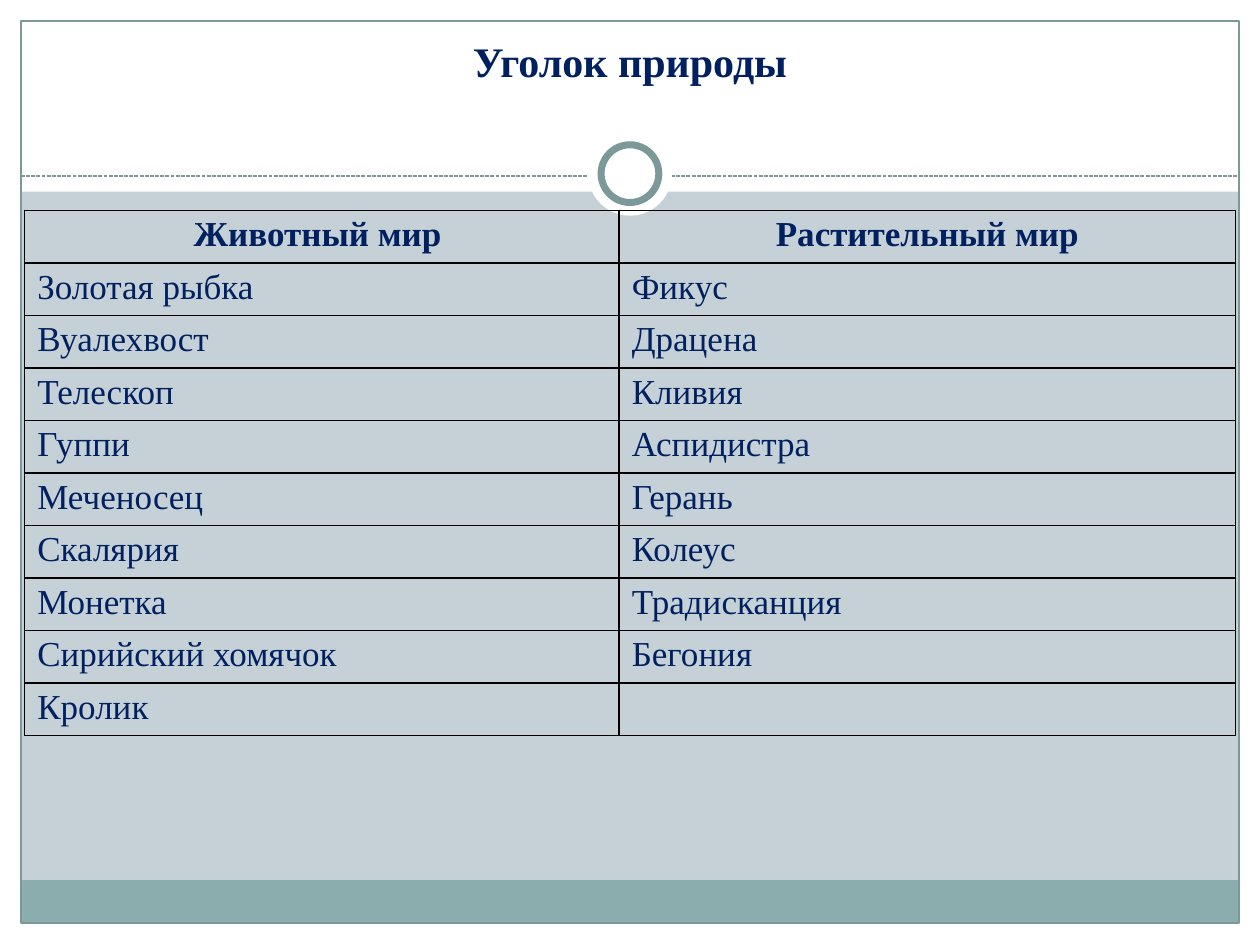
from lxml import etree
from pptx import Presentation
from pptx.dml.color import RGBColor
from pptx.enum.dml import MSO_LINE
from pptx.enum.shapes import MSO_CONNECTOR, MSO_SHAPE
from pptx.enum.text import MSO_ANCHOR, PP_ALIGN
from pptx.oxml.ns import qn
from pptx.util import Pt

RECTANGLE, OVAL = MSO_SHAPE.RECTANGLE, MSO_SHAPE.OVAL
STRAIGHT = MSO_CONNECTOR.STRAIGHT
DASH = MSO_LINE.SQUARE_DOT
TOP, CENTER, LEFT = MSO_ANCHOR.TOP, PP_ALIGN.CENTER, PP_ALIGN.LEFT
WHITE, TEAL, BAND, NAVY = "FFFFFF", "7C999A", "8CADAE", "002060"


def color(hex_string):
    return RGBColor.from_string(hex_string)


def add_text(paragraph, text, size, bold, alignment):
    paragraph.alignment = alignment
    run = paragraph.add_run()
    run.text = text
    run.font.name = "Times New Roman"
    run.font.size = Pt(size)
    run.font.bold = bold
    run.font.color.rgb = color(NAVY)


presentation = Presentation()
presentation.slide_width, presentation.slide_height = Pt(720), Pt(540)
slide = presentation.slides.add_slide(presentation.slide_layouts[6])
slide.background.fill.solid()
slide.background.fill.fore_color.rgb = color("C5D1D7")

# White margins, bottom band, frame, then the dashed rule and ring on top
decorations = [
    (RECTANGLE, 0, 528, 720, 12, WHITE, 0),
    (RECTANGLE, 0, 0, 720, 109.5, WHITE, 0),
    (RECTANGLE, 0, 0, 12, 540, WHITE, 0),
    (RECTANGLE, 708, 0, 12, 540, WHITE, 0),
    (RECTANGLE, 11.75, 503, 696, 24.5, BAND, 0),
    (RECTANGLE, 12, 12, 696, 515.5, None, 0.75),
    (OVAL, 336, 75.25, 48, 48, WHITE, 0),
    (OVAL, 343.5, 82.75, 33, 33, WHITE, 4),
]
for kind, left, top, width, height, fill, line_width in decorations:
    if kind == OVAL and not line_width:
        rule = slide.shapes.add_connector(STRAIGHT, Pt(12), Pt(100.6), Pt(708), Pt(100.6))
        rule.line.color.rgb = color(TEAL)
        rule.line.width = Pt(0.75)
        rule.line.dash_style = DASH
        etree.SubElement(rule._element.spPr, qn("a:effectLst"))
    shape = slide.shapes.add_shape(kind, Pt(left), Pt(top), Pt(width), Pt(height))
    shape.shadow.inherit = False
    if fill:
        shape.fill.solid()
        shape.fill.fore_color.rgb = color(fill)
    else:
        shape.fill.background()
    if line_width:
        shape.line.color.rgb = color(TEAL)
        shape.line.width = Pt(line_width)
    else:
        shape.line.fill.background()

# Title
title = slide.shapes.add_textbox(Pt(24), Pt(18), Pt(672), Pt(60))
title.text_frame.word_wrap = True
title.text_frame.vertical_anchor = TOP
title.text_frame.margin_top = Pt(2)
add_text(title.text_frame.paragraphs[0], "Уголок природы", 24, True, CENTER)

# Table of animals and plants
rows = [
    ("Животный мир ", "Растительный мир"),
    ("Золотая рыбка", "Фикус"),
    ("Вуалехвост", "Драцена"),
    ("Телескоп", "Кливия"),
    ("Гуппи", "Аспидистра"),
    ("Меченосец", "Герань"),
    ("Скалярия", "Колеус"),
    ("Монетка", "Традисканция"),
    ("Сирийский хомячок", "Бегония"),
    ("Кролик", ""),
]
row_height = 29.45
table = slide.shapes.add_table(
    len(rows), 2, Pt(14.1), Pt(120.25), Pt(692), Pt(row_height * len(rows))
).table
table.first_row = table.horz_banding = False
for column, width in zip(table.columns, (339.75, 352.25)):
    column.width = Pt(width)

for row_index, texts in enumerate(rows):
    table.rows[row_index].height = Pt(row_height)
    header = row_index == 0
    for column_index, text in enumerate(texts):
        cell = table.cell(row_index, column_index)
        cell.margin_top = cell.margin_bottom = Pt(3)
        if text:
            add_text(cell.text_frame.paragraphs[0], text, 20, header, CENTER if header else LEFT)
        # Borders come before the fill in the cell properties
        properties = cell._tc.get_or_add_tcPr()
        for side in ("lnL", "lnR", "lnT", "lnB"):
            border = etree.SubElement(properties, qn("a:" + side), w=str(Pt(1)))
            solid = etree.SubElement(border, qn("a:solidFill"))
            etree.SubElement(solid, qn("a:srgbClr"), val="000000")
        cell.fill.background()

presentation.save("out.pptx")
